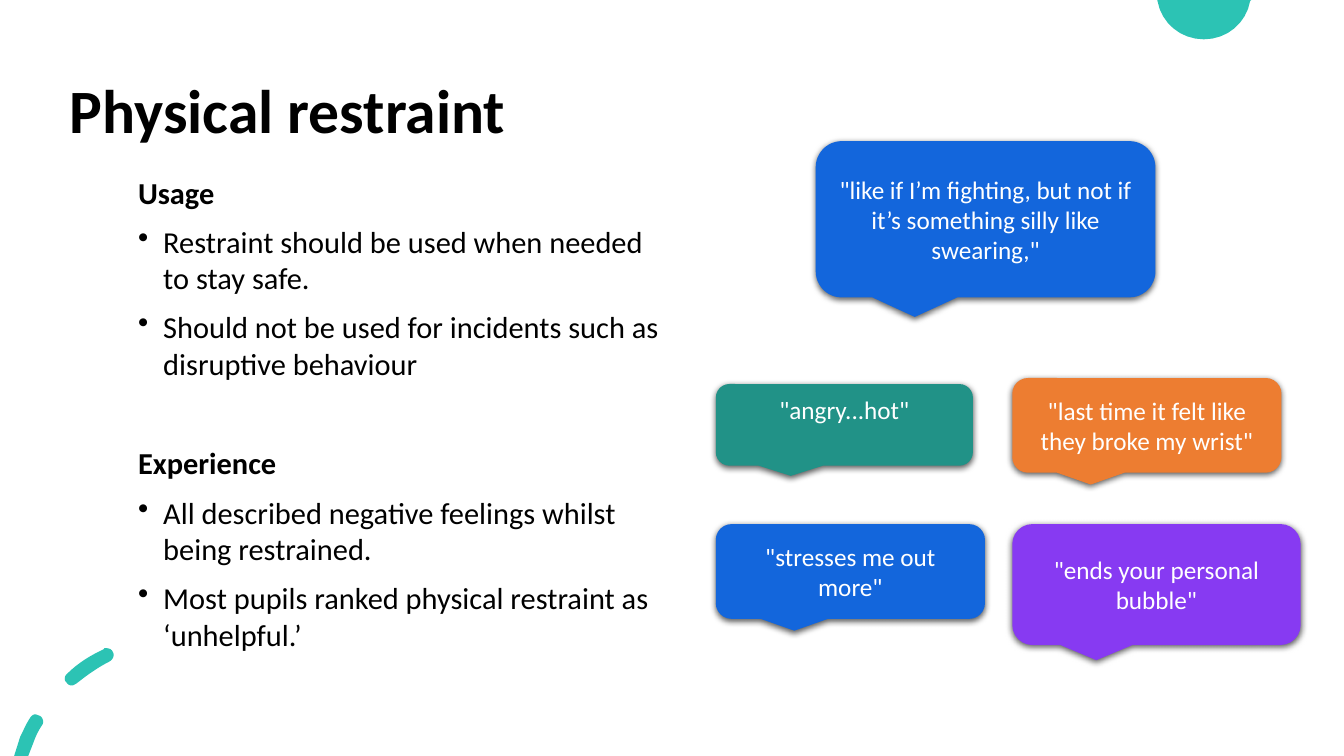
from lxml import etree
from pptx import Presentation
from pptx import util as u
from pptx.dml.color import RGBColor
from pptx.enum import shapes, text
from pptx.oxml import ns

TEAL, BLUE, WHITE, BLACK = "2CC3B4", "1366DC", "FFFFFF", "000000"


def tint(code):
    return RGBColor.from_string(code)


def bend(start, seg, steps=8):
    if len(seg) == 2:
        return [seg]
    knots = [start, seg[:2], seg[2:4], seg[4:]]
    points = []
    for step in range(1, steps + 1):
        t = step / steps
        w = ((1 - t) ** 3, 3 * t * (1 - t) ** 2, 3 * t * t * (1 - t), t ** 3)
        points.append(tuple(sum(a * k[i] for a, k in zip(w, knots)) for i in (0, 1)))
    return points


class Deck:
    """Hold the style and the current slide; lengths are percent of its size."""

    face = "Calibri"

    def __init__(self):
        self.prs = Presentation()
        self.prs.slide_width = u.Inches(13.33)
        self.prs.slide_height = u.Inches(7.5)
        self.slide = self.prs.slides.add_slide(self.prs.slide_layouts[5])

    def at(self, *shares):
        sides = (self.prs.slide_width, self.prs.slide_height)
        return [round(s / 100 * sides[i % 2]) for i, s in enumerate(shares)]

    def say(self, para, words, size, color, bold=False):
        run = para.add_run()
        run.text = words
        font = run.font
        font.name, font.size, font.bold = self.face, u.Pt(size), bold
        font.color.rgb = tint(color)

    def title(self, words, *box):
        shape = self.slide.shapes.title
        shape.left, shape.top, shape.width, shape.height = self.at(*box)
        frame = shape.text_frame
        frame.auto_size = text.MSO_AUTO_SIZE.NONE
        frame.vertical_anchor = text.MSO_ANCHOR.MIDDLE
        para = frame.paragraphs[0]
        para.alignment = text.PP_ALIGN.LEFT
        para.line_spacing = 0.9
        self.say(para, words, 44, BLACK, True)

    def outline(self, start, *segs):
        points = [start]
        for seg in segs:
            points += bend(points[-1], seg)
        spots = [self.at(*p) for p in points]
        form = self.slide.shapes.build_freeform(*spots[0])
        form.add_line_segments(spots[1:], close=True)
        shape = form.convert_to_shape()
        shape.shadow.inherit = False
        shape.fill.solid()
        shape.fill.fore_color.rgb = tint(TEAL)
        shape.line.fill.background()

    def bullet(self, para):
        props = para._p.get_or_add_pPr()
        props.set("marL", str(u.Inches(0.25)))
        props.set("indent", str(-u.Inches(0.25)))
        etree.SubElement(props, ns.qn("a:buChar")).set("char", "•")

    def body(self, parts, *box):
        shape = self.slide.shapes.add_textbox(*self.at(*box))
        shape.fill.solid()
        shape.fill.fore_color.rgb = tint(WHITE)
        frame = shape.text_frame
        frame.word_wrap = True
        para = frame.paragraphs[0]
        para.line_spacing = 0.7
        for n, (head, items) in enumerate(parts):
            if n:
                para = frame.add_paragraph()
                para.space_before = u.Pt(45)
            self.say(para, head, 21.7, BLACK, True)
            for item in items:
                para = frame.add_paragraph()
                self.bullet(para)
                para.space_before = u.Pt(9.2)
                self.say(para, item, 21.7, BLACK)

    def shade(self, shape):
        shape.shadow.inherit = False
        effects = shape._element.spPr.find(ns.qn("a:effectLst"))
        drop = etree.SubElement(effects, ns.qn("a:outerShdw"))
        for key, value in (("blurRad", u.Pt(4.5)), ("dist", u.Pt(1.5)),
                           ("dir", 5400000), ("algn", "ctr"), ("rotWithShape", 0)):
            drop.set(key, str(value))
        color = etree.SubElement(drop, ns.qn("a:srgbClr"))
        color.set("val", BLACK)
        etree.SubElement(color, ns.qn("a:alpha")).set("val", "63000")

    def quote(self, words, color, box, foot=0.05):
        kind = shapes.MSO_SHAPE.ROUNDED_RECTANGULAR_CALLOUT
        shape = self.slide.shapes.add_shape(kind, *self.at(*box))
        self.shade(shape)
        shape.fill.solid()
        shape.fill.fore_color.rgb = tint(color)
        shape.line.fill.background()
        frame = shape.text_frame
        frame.word_wrap = True
        frame.margin_bottom = u.Inches(foot)
        frame.vertical_anchor = text.MSO_ANCHOR.MIDDLE
        para = frame.paragraphs[0]
        para.alignment = text.PP_ALIGN.CENTER
        self.say(para, f'"{words}"', 18, WHITE)


def main():
    deck = Deck()
    deck.outline((86.12, 0), (93.1, 0), (93.02, 0.13),
                 (92.72, 3.07, 91.3, 5.2, 89.57, 5.2),
                 (87.85, 5.2, 86.42, 3.07, 86.12, 0.13))
    deck.outline((2.7, 94.53), (2.55, 94.4, 2.33, 94.67, 2.25, 94.93),
                 (1.95, 95.73, 1.73, 96.67, 1.5, 97.47),
                 (1.05, 100), (2.1, 100), (2.48, 98.27),
                 (2.63, 97.47, 2.85, 96.67, 3.15, 95.87),
                 (3.3, 95.47, 3.15, 94.8, 2.93, 94.67))
    deck.outline((7.88, 85.73), (7.8, 85.73, 7.73, 85.73, 7.73, 85.87),
                 (6.75, 86.67, 5.78, 87.73, 5.03, 89.07),
                 (4.8, 89.33, 4.73, 90, 4.95, 90.27),
                 (5.03, 90.53, 5.18, 90.67, 5.33, 90.67),
                 (5.48, 90.67, 5.55, 90.53, 5.7, 90.4),
                 (6.45, 89.33, 7.28, 88.27, 8.18, 87.47),
                 (8.4, 87.2, 8.55, 86.67, 8.4, 86.27),
                 (8.33, 85.87, 8.1, 85.73, 7.88, 85.73))
    deck.title("Physical restraint", 4.43, 5.33, 86.27, 19.33)
    deck.body([
        ("Usage", ["Restraint should be used when needed to stay safe.",
                   "Should not be used for incidents such as disruptive behaviour"]),
        ("Experience", ["All described negative feelings whilst being restrained.",
                        "Most pupils ranked physical restraint as ‘unhelpful.’"]),
    ], 9.53, 23.73, 41.11, 67.6)

    left, right, low = 53.26, 75.32, 69.33
    wide, high = 20.03, 12.53
    deck.quote("like if I’m fighting, but not if it’s something silly like swearing,",
               BLUE, (60.69, 18.67, 25.28, 20.67))
    deck.quote("angry...hot", "219287", (left, 50.8, 19.13, 10.8), foot=0.35)
    deck.quote("ends your personal bubble", "873AF2", (right, low, 21.46, 16))
    deck.quote("stresses me out more", BLUE, (left, low, wide, high))
    deck.quote("last time it felt like they broke my wrist", "ED7D31",
               (right, 50, wide, high))
    deck.prs.save("out.pptx")


if __name__ == "__main__":
    main()
